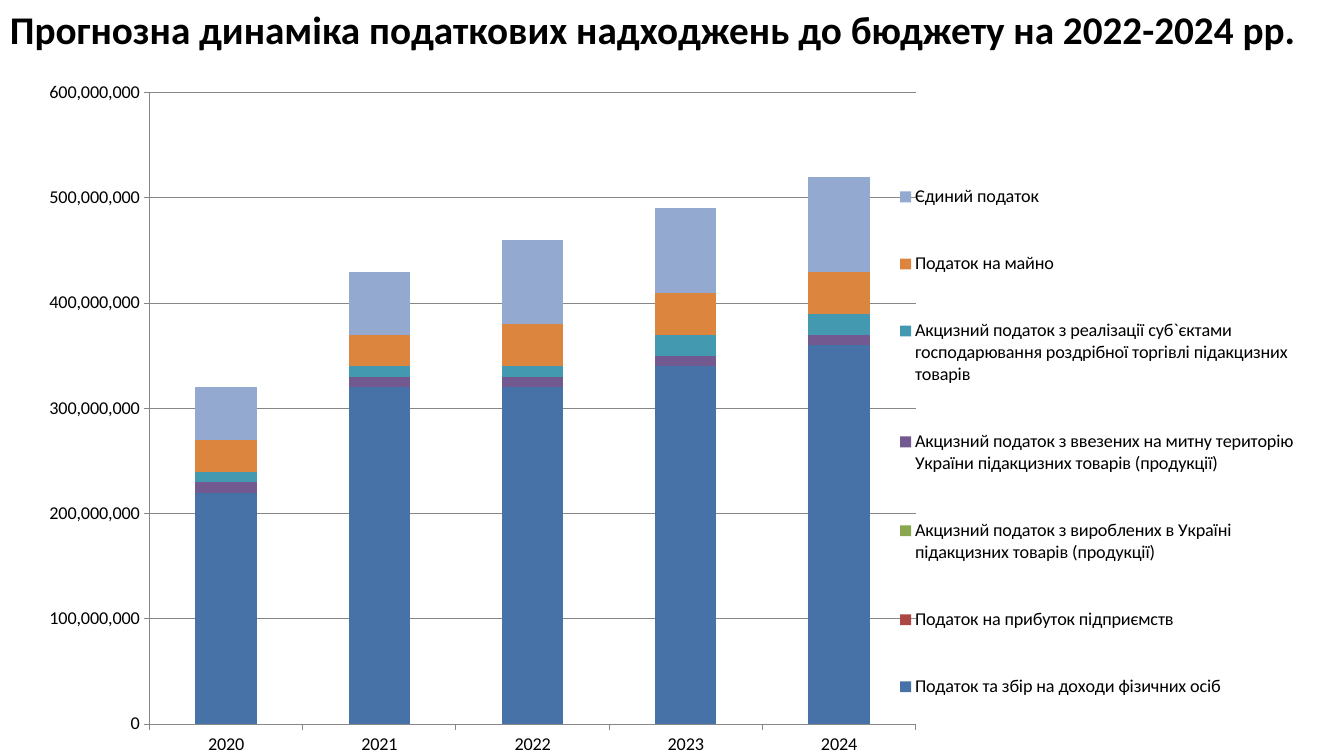
from lxml.etree import SubElement
from pptx import Presentation
from pptx.chart.data import CategoryChartData
from pptx.dml.color import RGBColor
from pptx.enum.chart import XL_CHART_TYPE, XL_LEGEND_POSITION, XL_TICK_MARK
from pptx.enum.text import MSO_AUTO_SIZE
from pptx.oxml.ns import qn
from pptx.util import Pt

FONT = "Calibri"
COLORS = {
    "text": "000000",
    "grid": "878787",
    "income": "4672A8",
    "profit": "AB4744",
    "excise_made": "8AA64F",
    "excise_imported": "725990",
    "excise_retail": "4299B0",
    "property": "DC853E",
    "single": "93A9CF",
}
YEARS = ["2020", "2021", "2022", "2023", "2024"]
MILLION = 1_000_000

# Colour key, tax name, revenue by year in millions
TAXES = [
    ("income", "Податок та збір на доходи фізичних осіб", [220, 320, 320, 340, 360]),
    ("profit", "Податок на прибуток підприємств", [0, 0, 0, 0, 0]),
    ("excise_made", "Акцизний податок з вироблених в Україні підакцизних товарів (продукції)",
     [0, 0, 0, 0, 0]),
    ("excise_imported",
     "Акцизний податок з ввезених на митну територію України підакцизних товарів (продукції)",
     [10, 10, 10, 10, 10]),
    ("excise_retail",
     "Акцизний податок з реалізації суб`єктами господарювання роздрібної торгівлі "
     "підакцизних товарів", [10, 10, 10, 20, 20]),
    ("property", "Податок на майно", [30, 30, 40, 40, 40]),
    ("single", "Єдиний податок", [50, 60, 80, 80, 90]),
]


def color(name):
    return RGBColor.from_string(COLORS[name])


def set_layout(element, position, target, *box):
    """Place a chart part by percentages of the chart: left, top, width, height."""
    for old_layout in element.findall(qn("c:layout")):
        element.remove(old_layout)
    layout = SubElement(element, qn("c:layout"))
    element.insert(position, layout)
    manual = SubElement(layout, qn("c:manualLayout"))
    settings = [("layoutTarget", target)] if target else []
    settings += [("xMode", "edge"), ("yMode", "edge")]
    settings += [(tag, percent / 100) for tag, percent in zip("xywh", box)]
    for tag, value in settings:
        SubElement(manual, qn(f"c:{tag}")).set("val", str(value))


presentation = Presentation()
presentation.slide_width = Pt(960)
presentation.slide_height = Pt(540)
slide = presentation.slides.add_slide(presentation.slide_layouts[6])

# Stacked column chart
chart_data = CategoryChartData(number_format="#,##0")
chart_data.categories = YEARS
for _, name, revenue in TAXES:
    chart_data.add_series(name, [value * MILLION for value in revenue])
chart = slide.shapes.add_chart(
    XL_CHART_TYPE.COLUMN_STACKED, Pt(35.3), Pt(58.3), Pt(906.5), Pt(481.7), chart_data
).chart
chart.has_title = False
chart.font.name = FONT
chart.font.size = Pt(13)
chart.font.color.rgb = color("text")

plot = chart.plots[0]
plot.gap_width = 150
plot.overlap = 100
plot.vary_by_categories = False
for series, (key, _, _) in zip(plot.series, TAXES):
    series.format.fill.solid()
    series.format.fill.fore_color.rgb = color(key)

# Axes
value_axis = chart.value_axis
value_axis.minimum_scale = 0
value_axis.maximum_scale = 600 * MILLION
value_axis.major_unit = 100 * MILLION
value_axis.has_major_gridlines = True
value_axis.tick_labels.number_format = "#,##0"
value_axis.tick_labels.number_format_is_linked = False
for axis in (chart.category_axis, value_axis):
    axis.major_tick_mark = XL_TICK_MARK.OUTSIDE
    axis.minor_tick_mark = XL_TICK_MARK.NONE
    axis.tick_labels.font.size = Pt(13)
for ruled in (chart.category_axis, value_axis, value_axis.major_gridlines):
    ruled.format.line.color.rgb = color("grid")
    ruled.format.line.width = Pt(0.75)

# Legend
chart.has_legend = True
legend = chart.legend
legend.position = XL_LEGEND_POSITION.RIGHT
legend.include_in_layout = False
legend.font.size = Pt(13)

plot_area = chart.element.find(".//" + qn("c:plotArea"))
legend_element = chart.element.find(".//" + qn("c:legend"))
set_layout(plot_area, 0, "inner", 7.7, 1.3, 60.5, 94.4)
set_layout(legend_element, 1, None, 66, 8.5, 33, 90)

# Title
title = slide.shapes.add_textbox(0, 0, Pt(960), Pt(41))
title.text_frame.word_wrap = True
title.text_frame.auto_size = MSO_AUTO_SIZE.SHAPE_TO_FIT_TEXT
title.text_frame.text = "Прогнозна динаміка податкових надходжень до бюджету на 2022-2024 рр."
title_font = title.text_frame.paragraphs[0].runs[0].font
title_font.name = FONT
title_font.size = Pt(28)
title_font.bold = True
title_font.color.rgb = color("text")

presentation.save("out.pptx")
